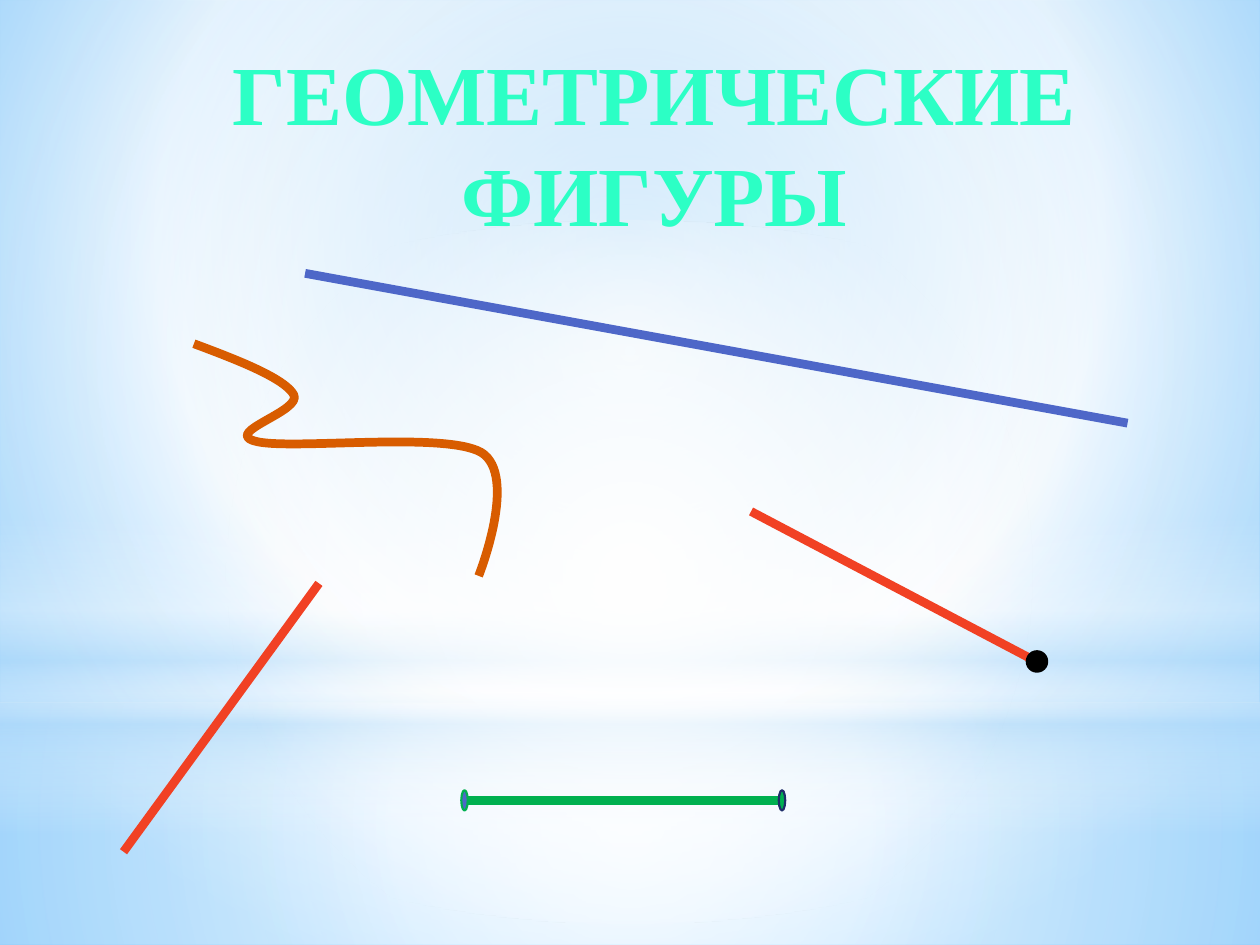
from lxml import etree
from pptx import Presentation
from pptx.dml.color import RGBColor
from pptx.enum import shapes, text
from pptx.oxml import parse_xml
from pptx.oxml import ns
from pptx.util import Cm, Pt

MINT = RGBColor(0x2C, 0xFF, 0xC5)
BLUE = RGBColor(0x4E, 0x67, 0xC8)
NAVY = RGBColor(0x1F, 0x2E, 0x69)
ORANGE = RGBColor(0xD8, 0x5C, 0x00)
GREEN = RGBColor(0x00, 0xB0, 0x50)
RED = RGBColor(0xF1, 0x41, 0x24)
BLACK = RGBColor(0, 0, 0)
WHITE = RGBColor(0xFF, 0xFF, 0xFF)
PALE = RGBColor(0xB4, 0xDC, 0xFA)
SKY = RGBColor(0x4F, 0xAD, 0xF3)
AZURE = RGBColor(0x5B, 0xB9, 0xFF)

CENTRE = (50, 50, 50, 50)
SHAPE = shapes.MSO_SHAPE
PANELS = [
    (SHAPE.RECTANGLE, 14.17, 4.88, CENTRE,
     [(0, WHITE, 91), (37, WHITE, 76), (100, PALE, 79)]),
    (SHAPE.RECTANGLE, 0, 14.17, CENTRE,
     [(0, WHITE, 89), (48, WHITE, 62), (100, PALE, 79)]),
    (SHAPE.RECTANGLE, 10.46, 6.35, None,
     [(0, WHITE, 0), (29, WHITE, 30), (45, PALE, 40),
      (55, WHITE, 26), (65, PALE, 60), (100, WHITE, 0)]),
    (SHAPE.OVAL, 4.45, 14.17, CENTRE, [(0, WHITE, 100), (56, WHITE, 0)]),
]
CURVE_START = (3.91, 6.93)
CURVE = [
    [(4.8, 7.26), (5.72, 7.62), (5.92, 7.95)],
    [(6.12, 8.28), (4.5, 8.71), (5.13, 8.89)],
    [(5.77, 9.09), (8.94, 8.69), (9.7, 9.12)],
    [(10.46, 9.58), (9.65, 11.61), (9.65, 11.61)],
]


def set_gradient(fill, element, stops, focus):
    """Fill with a circular gradient around focus, or a vertical one without it."""
    fill.gradient()
    gs = "".join(
        f'<a:gs pos="{pos * 1000}"><a:srgbClr val="{color}">'
        f'<a:alpha val="{alpha * 1000}"/></a:srgbClr></a:gs>'
        for pos, color, alpha in stops)
    direction = '<a:lin ang="5400000" scaled="0"/>'
    if focus:
        sides = " ".join(f'{k}="{v * 1000}"' for k, v in zip("ltrb", focus))
        direction = f'<a:path path="circle"><a:fillToRect {sides}/></a:path>'
    old = next(element.iter(ns.qn("a:gradFill")))
    old.getparent().replace(old, parse_xml(
        f'<a:gradFill {ns.nsdecls("a")} rotWithShape="1">'
        f'<a:gsLst>{gs}</a:gsLst>{direction}</a:gradFill>'))


def add_panel(s, kind, top, height, focus, stops):
    """Add a translucent full-width backdrop panel."""
    sp = s.shapes.add_shape(kind, 0, Cm(top), Cm(25.4), Cm(height))
    sp.shadow.inherit = False
    sp.line.fill.background()
    set_gradient(sp.fill, sp._element, stops, focus)


def set_title(s, words):
    """Place and format the title above the backdrop."""
    sp = s.shapes.title
    s.shapes._spTree.append(sp._element)
    sp.left, sp.top, sp.width, sp.height = Cm(1.7), Cm(0.69), Cm(22.99), Cm(4.37)
    tf = sp.text_frame
    tf.text = words
    tf.word_wrap = True
    tf.auto_size = text.MSO_AUTO_SIZE.NONE
    tf.vertical_anchor = text.MSO_ANCHOR.MIDDLE
    p = tf.paragraphs[0]
    p.alignment = text.PP_ALIGN.CENTER
    p.line_spacing = 1.0
    p.font.name = "Times New Roman"
    p.font.size = Pt(48)
    p.font.bold = True
    p.font.color.rgb = MINT


def add_line(s, start, end, color):
    """Add a thick straight line."""
    cx = s.shapes.add_connector(
        shapes.MSO_CONNECTOR.STRAIGHT, *map(Cm, start), *map(Cm, end))
    cx.line.color.rgb = color
    cx.line.width = Pt(5)
    etree.SubElement(cx._element.spPr, ns.qn("a:effectLst"))


def add_point(s, left, top, width, fill, line):
    """Add a round end point."""
    sp = s.shapes.add_shape(SHAPE.FLOWCHART_CONNECTOR,
                            Cm(left), Cm(top), Cm(width), Cm(0.41))
    sp.shadow.inherit = False
    sp.fill.solid()
    sp.fill.fore_color.rgb = fill
    sp.line.color.rgb = line
    sp.line.width = Pt(1.25)


def add_curve(s, start, segments, color):
    """Add an open curve of cubic segments starting at its top left corner."""
    x0, y0 = start
    fb = s.shapes.build_freeform(Cm(x0), Cm(y0))
    fb.add_line_segments([(Cm(x), Cm(y)) for *_, (x, y) in segments], close=False)
    sp = fb.convert_to_shape()
    sp.shadow.inherit = False
    sp.fill.background()
    sp.line.color.rgb = color
    sp.line.width = Pt(5)
    for ln, points in zip(list(sp._element.iter(ns.qn("a:lnTo"))), segments):
        bez = etree.Element(ns.qn("a:cubicBezTo"))
        for x, y in points:
            etree.SubElement(bez, ns.qn("a:pt"),
                             x=str(Cm(x - x0)), y=str(Cm(y - y0)))
        ln.getparent().replace(ln, bez)


def main():
    """Build the slide of geometric figures."""
    prs = Presentation()
    prs.slide_width, prs.slide_height = Cm(25.4), Cm(19.05)
    s = prs.slides.add_slide(prs.slide_layouts[5])
    set_gradient(s.background.fill, s._element,
                 [(0, SKY, 100), (60, WHITE, 100), (100, AZURE, 100)],
                 (20, 10, 20, 60))
    for panel in PANELS:
        add_panel(s, *panel)
    set_title(s, "ГЕОМЕТРИЧЕСКИЕ ФИГУРЫ")
    add_line(s, (6.15, 5.51), (22.73, 8.53), BLUE)
    add_curve(s, CURVE_START, CURVE, ORANGE)
    add_line(s, (9.3, 16.13), (15.7, 16.13), GREEN)
    add_point(s, 9.3, 15.93, 0.13, BLUE, GREEN)
    add_point(s, 15.7, 15.93, 0.13, GREEN, NAVY)
    add_line(s, (15.14, 10.31), (20.9, 13.34), RED)
    add_point(s, 20.7, 13.13, 0.41, BLACK, BLACK)
    add_line(s, (6.43, 11.76), (2.49, 17.17), RED)
    prs.save("out.pptx")


if __name__ == "__main__":
    main()
